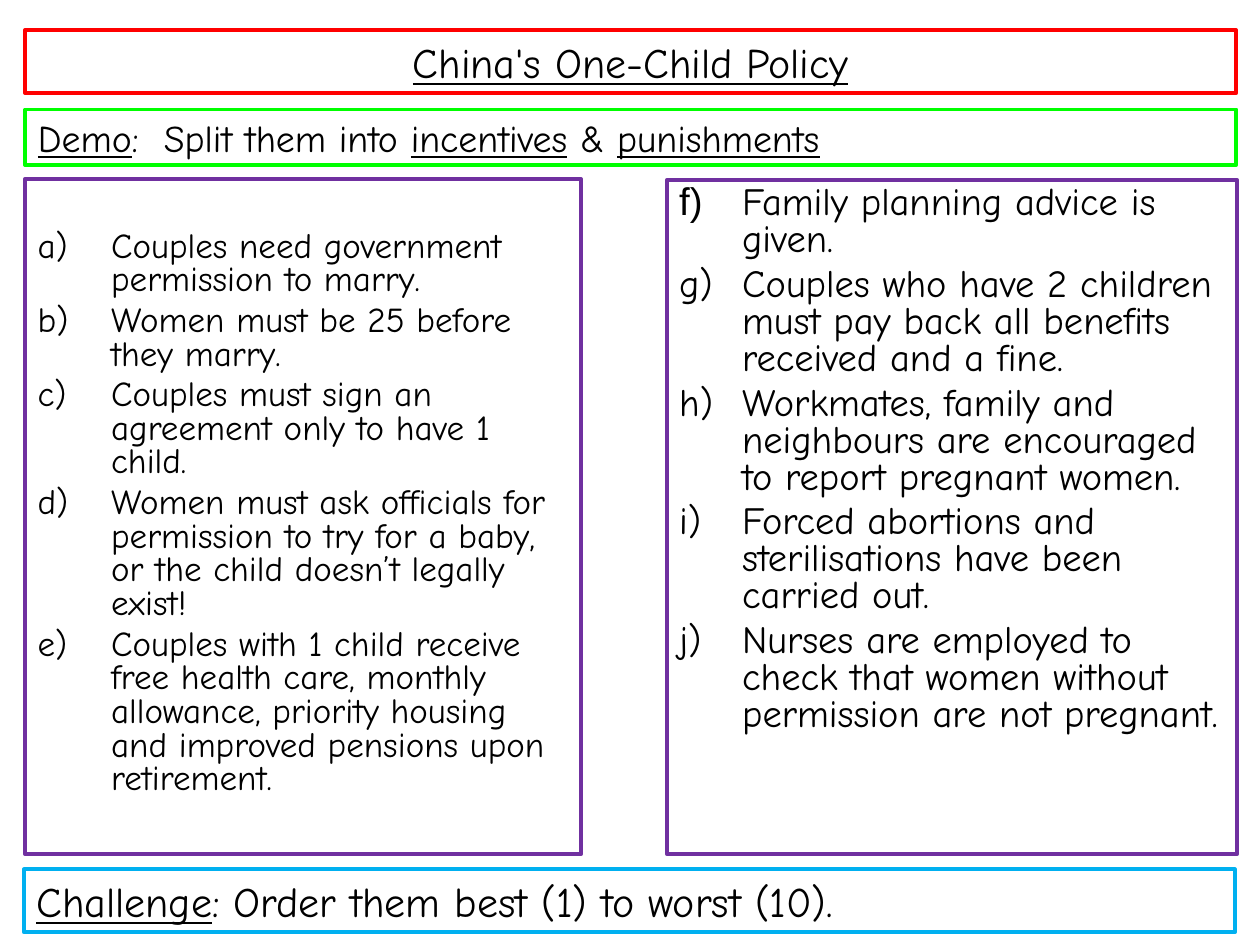
from pptx import Presentation
from pptx.dml.color import RGBColor
from pptx.enum import shapes, text
from pptx.oxml import xmlchemy
from pptx.util import Pt

FONT = "Comic Neue"
INCENTIVES = [
    "Couples need government permission to marry.",
    "Women must be 25 before they marry.",
    "Couples must sign an agreement only to have 1 child.",
    "Women must ask officials for permission to try for a baby, "
    "or the child doesn’t legally exist!",
    "Couples with 1 child receive free health care, monthly allowance, "
    "priority housing and improved pensions upon retirement.",
]
PUNISHMENTS = [
    "Family planning advice is given.",
    "Couples who have 2 children must pay back all benefits received and a fine.",
    "Workmates, family and neighbours are encouraged to report pregnant women.",
    "Forced abortions and sterilisations have been carried out.",
    "Nurses are employed to check that women without permission are not pregnant.",
]


def color(value):
    return RGBColor.from_string(value)


def place(shape, box):
    shape.left, shape.top, shape.width, shape.height = (Pt(length) for length in box)


def add_run(paragraph, words, size, underline=False, font=FONT):
    run = paragraph.add_run()
    run.text = words
    run.font.name, run.font.size = font, Pt(size)
    run.font.underline = underline
    run.font.color.rgb = color("000000")


def outline(shape, line):
    shape.line.color.rgb = color(line)
    shape.line.width = Pt(2.25)


def add_frame(slide, box, line, fill=None):
    shape = slide.shapes.add_shape(shapes.MSO_SHAPE.RECTANGLE, 0, 0, 0, 0)
    place(shape, box)
    shape.shadow.inherit = False
    outline(shape, line)
    if fill:
        shape.fill.solid()
        shape.fill.fore_color.rgb = color(fill)
    else:
        shape.fill.background()
    shape.text_frame.word_wrap = True
    return shape


def fill_banner(shape, pieces, size, alignment=text.PP_ALIGN.LEFT):
    """Write one line of (words, underlined) pieces, centred vertically."""
    frame = shape.text_frame
    frame.word_wrap = True
    frame.auto_size = text.MSO_AUTO_SIZE.NONE
    frame.vertical_anchor = text.MSO_ANCHOR.MIDDLE
    paragraph = frame.paragraphs[0]
    paragraph.alignment = alignment
    for words, underline in pieces:
        add_run(paragraph, words, size, underline)


def add_list(slide, box, items, size, indent, top_margin, first_letter=None):
    """Letter the items automatically, or with typed letters from first_letter."""
    frame = add_frame(slide, box, "7030A0", "FFFFFF").text_frame
    frame.vertical_anchor = text.MSO_ANCHOR.TOP
    frame.margin_top = Pt(top_margin)
    for index, item in enumerate(items):
        paragraph = frame.add_paragraph() if index else frame.paragraphs[0]
        paragraph.alignment = text.PP_ALIGN.LEFT
        paragraph.line_spacing = 0.8
        paragraph.space_before = Pt(size * 0.2)
        properties = paragraph._p.get_or_add_pPr()
        properties.set("marL", str(Pt(indent)))
        properties.set("indent", str(-Pt(indent)))
        if first_letter:
            label = chr(ord(first_letter) + index) + ")\t"
            add_run(paragraph, label, size, font=FONT if index else "Arial")
        else:
            font = xmlchemy.OxmlElement("a:buFont")
            font.set("typeface", FONT)
            numbering = xmlchemy.OxmlElement("a:buAutoNum")
            numbering.set("type", "alphaLcParenR")
            properties.extend([font, numbering])
        add_run(paragraph, item, size)


def add_task(slide, box):
    title = slide.shapes.title
    place(title, box)
    outline(title, "00FF00")
    fill_banner(title, [("Demo", True), (":  Split them into ", False),
                        ("incentives", True), (" & ", False),
                        ("punishments", True)], 21.6)


def main():
    presentation = Presentation()
    presentation.slide_width, presentation.slide_height = Pt(720), Pt(540)
    slide = presentation.slides.add_slide(presentation.slide_layouts[5])

    add_task(slide, (14.4, 62.6, 692, 31.7))
    add_list(slide, (14.4, 102.2, 317.5, 386), INCENTIVES, 20, 42, 30)
    add_list(slide, (381, 103, 326, 385), PUNISHMENTS, 22, 36, 3.6, "f")
    heading = add_frame(slide, (14.4, 17.3, 692, 36), "FF0000")
    fill_banner(heading, [("China's One-Child Policy", True)], 24,
                text.PP_ALIGN.CENTER)
    challenge = add_frame(slide, (13.7, 496.8, 692, 36), "00B0F0")
    fill_banner(challenge, [("Challenge", True),
                            (": Order them best (1) to worst (10).", False)], 24)

    presentation.save("out.pptx")


if __name__ == "__main__":
    main()
